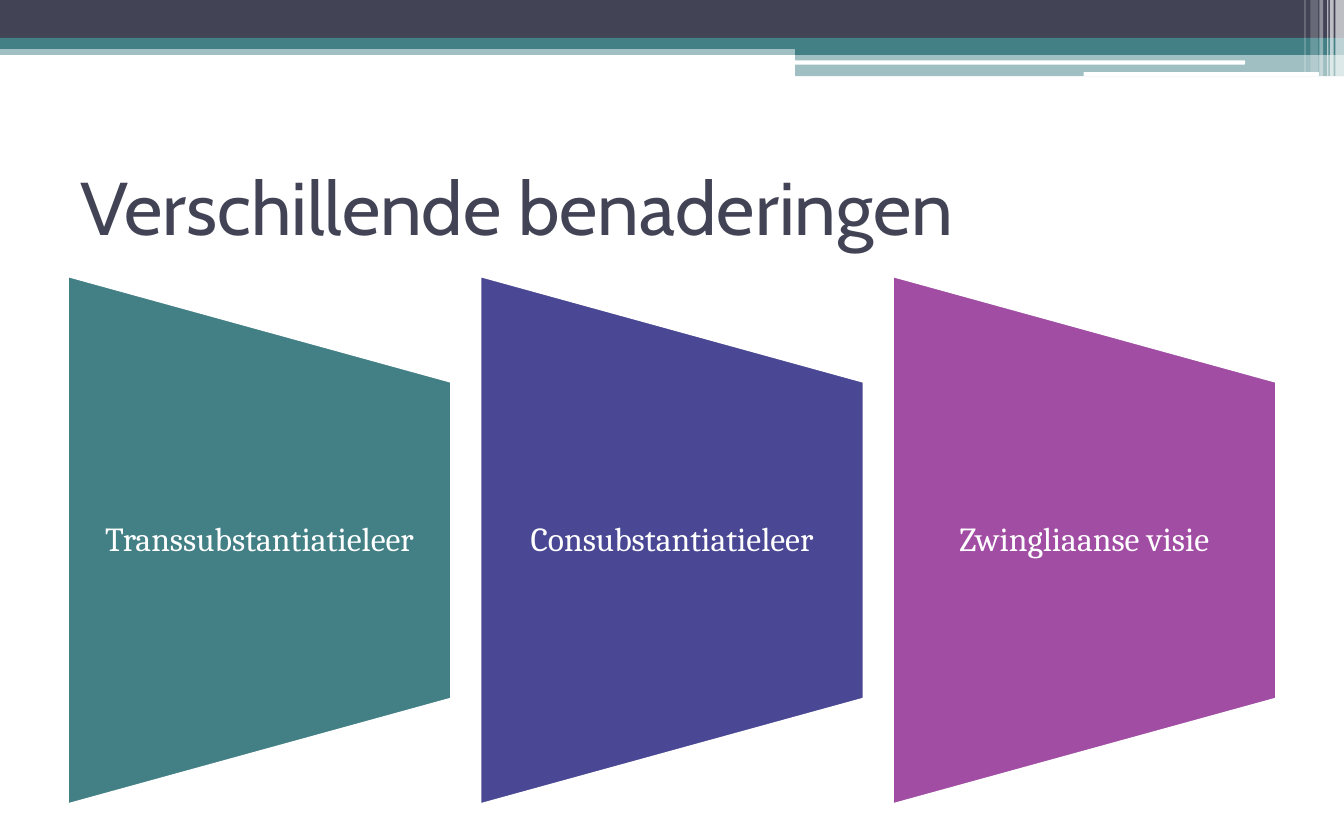
from dataclasses import dataclass

from lxml.etree import SubElement
from pptx import Presentation
from pptx.dml.color import RGBColor
from pptx.enum.shapes import MSO_SHAPE as Shape
from pptx.enum.text import MSO_ANCHOR as Anchor, MSO_AUTO_SIZE as AutoSize, PP_ALIGN as Align
from pptx.oxml.ns import qn
from pptx.util import Pt


@dataclass(frozen=True)
class Theme:
    slate: str = "424456"
    teal: str = "438086"
    indigo: str = "4A4894"
    purple: str = "A04DA3"
    white: str = "FFFFFF"
    heading_font: str = "Cabin"
    body_font: str = "Cambria"
    title_size: float = 40
    label_size: float = 18


THEME = Theme()
SLIDE_WIDTH, SLIDE_HEIGHT = 720, 450

# left, top, width, height, colour, opacity in percent
HEADER_BANDS = [
    (0, 23.9, SLIDE_WIDTH, 5.6, THEME.teal, 50),
    (0, 0, SLIDE_WIDTH, 20.3, THEME.slate, 100),
    (0, 20.3, SLIDE_WIDTH, 6, THEME.teal, 100),
    (426, 23.9, 294, 5.6, THEME.teal, 100),
    (426, 29.5, 294, 11.3, THEME.teal, 50),
]
# left, top, width, height
HEADER_GAPS = [(425.5, 32.4, 241.5, 2.2), (580.5, 38.6, 126, 2.2)]
# left, width, height, opacity in percent
EDGE_STRIPES = [
    (715.4, 4.6, 41, 65),
    (712.4, 2, 41, 65),
    (710.9, 0.7, 41, 60),
    (706.8, 2, 41, 40),
    (702, 4.2, 38.5, 20),
    (698.7, 0.7, 38.5, 30),
]

VIEWS = [
    ("Transsubstantiatieleer", THEME.teal),
    ("Consubstantiatieleer", THEME.indigo),
    ("Zwingliaanse visie", THEME.purple),
]
PANELS_LEFT, PANELS_RIGHT = 36.2, 683.8
PANEL_WIDTH, PANEL_HEIGHT, PANEL_MIDDLE = 205.7, 283.4, 289.4
LABEL_HEIGHT = 170


def apply_format(target, values):
    for attribute, value in values.items():
        setattr(target, attribute, value)


def add_filled(shapes, preset, box, colour, opacity=100):
    filled = shapes.add_shape(preset, *map(Pt, box))
    filled.shadow.inherit = False
    filled.fill.solid()
    filled.fill.fore_color.rgb = RGBColor.from_string(colour)
    filled.line.fill.background()
    if opacity < 100:
        colour_element = filled.fill._xPr.find(f"{qn('a:solidFill')}/{qn('a:srgbClr')}")
        SubElement(colour_element, qn("a:alpha"), val=str(opacity * 1000))
    return filled


def add_header(shapes):
    for *box, colour, opacity in HEADER_BANDS:
        add_filled(shapes, Shape.RECTANGLE, box, colour, opacity)
    for box in HEADER_GAPS:
        add_filled(shapes, Shape.ROUNDED_RECTANGLE, box, THEME.white)
    for left, width, height, opacity in EDGE_STRIPES:
        add_filled(shapes, Shape.RECTANGLE, (left, 0, width, height), THEME.white, opacity)


def write_text(frame, text, font, size, colour, paragraph_format):
    frame.text = text
    paragraph = frame.paragraphs[0]
    apply_format(paragraph, paragraph_format)
    run_font = paragraph.runs[0].font
    apply_format(run_font, {"name": font, "size": Pt(size)})
    run_font.color.rgb = RGBColor.from_string(colour)


def set_title(title, text):
    apply_format(title, {"left": Pt(36), "top": Pt(75), "width": Pt(648), "height": Pt(70)})
    apply_format(title.text_frame, {"vertical_anchor": Anchor.MIDDLE, "auto_size": AutoSize.NONE})
    write_text(title.text_frame, text, THEME.heading_font, THEME.title_size,
               THEME.slate, {"alignment": Align.LEFT})


def add_panel(shapes, left, text, colour):
    """Add a trapezoid turned on its side, with an upright label over it."""
    turned_box = (left + (PANEL_WIDTH - PANEL_HEIGHT) / 2, PANEL_MIDDLE - PANEL_WIDTH / 2,
                  PANEL_HEIGHT, PANEL_WIDTH)
    trapezoid = add_filled(shapes, Shape.FLOWCHART_MANUAL_OPERATION, turned_box, colour)
    trapezoid.rotation = 270
    trapezoid.line.color.rgb = RGBColor.from_string(THEME.white)
    trapezoid.line.width = Pt(1.5)

    label_box = (left, PANEL_MIDDLE - LABEL_HEIGHT / 2, PANEL_WIDTH, LABEL_HEIGHT)
    label = shapes.add_textbox(*map(Pt, label_box)).text_frame
    apply_format(label, {
        "word_wrap": True, "vertical_anchor": Anchor.MIDDLE,
        "margin_left": Pt(8.6), "margin_right": Pt(8.6),
        "margin_top": 0, "margin_bottom": 0,
    })
    write_text(label, text, THEME.body_font, THEME.label_size, THEME.white,
               {"alignment": Align.CENTER, "line_spacing": 0.9, "space_after": Pt(6.3)})


def main():
    deck = Presentation()
    apply_format(deck, {"slide_width": Pt(SLIDE_WIDTH), "slide_height": Pt(SLIDE_HEIGHT)})
    title_only = deck.slide_layouts.get_by_name("Title Only")
    shapes = deck.slides.add_slide(title_only).shapes

    add_header(shapes)
    set_title(shapes.title, "Verschillende benaderingen")

    panels = shapes.add_group_shape().shapes
    pitch = (PANELS_RIGHT - PANELS_LEFT - PANEL_WIDTH) / (len(VIEWS) - 1)
    for column, (view, colour) in enumerate(VIEWS):
        add_panel(panels, PANELS_LEFT + column * pitch, view, colour)

    deck.save("out.pptx")


if __name__ == "__main__":
    main()
